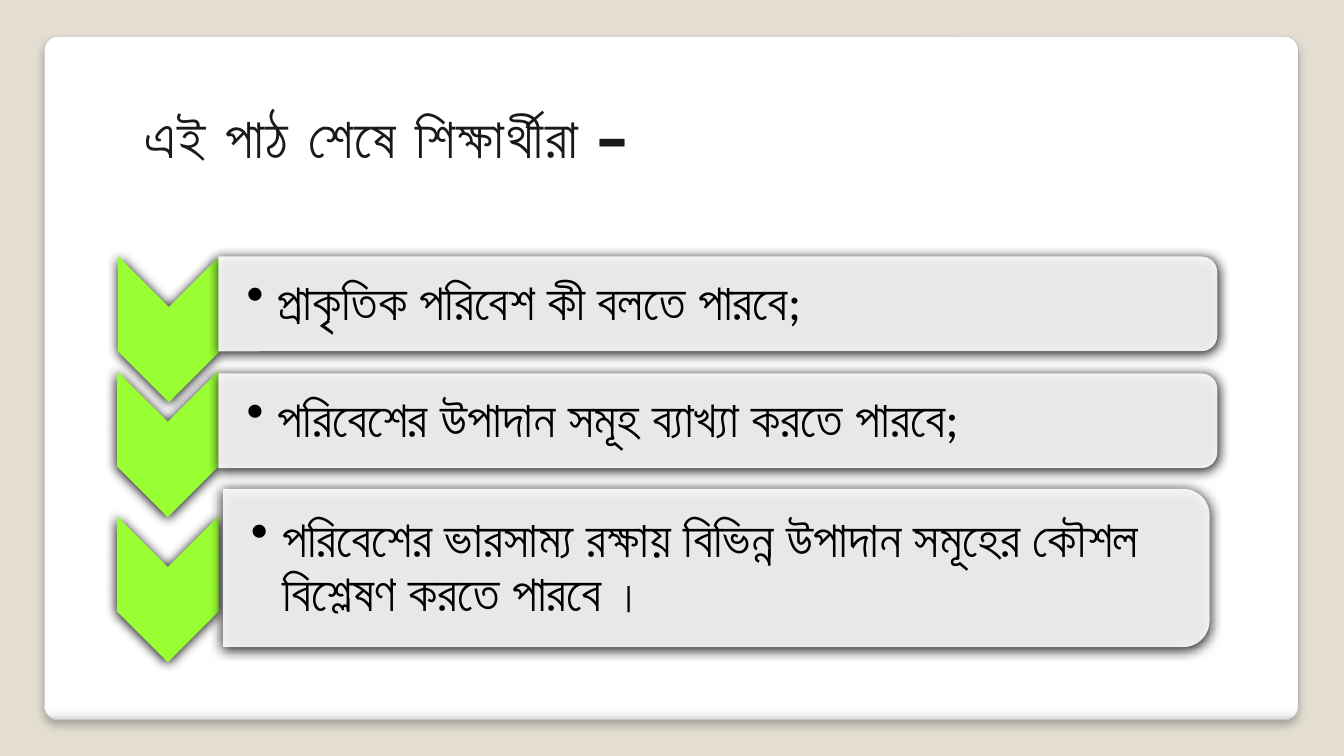
from lxml import etree
from pptx import Presentation
from pptx import util as u
from pptx.dml.color import RGBColor
from pptx.enum import shapes, text
from pptx.oxml import parse_xml
from pptx.oxml.ns import nsdecls, qn

BEIGE = RGBColor(0xE3, 0xDE, 0xD1)
WHITE = RGBColor(0xFF, 0xFF, 0xFF)
BLACK = RGBColor(0x00, 0x00, 0x00)
CHARCOAL = RGBColor(0x19, 0x19, 0x19)
GREY = RGBColor(0xA4, 0xA4, 0xA4)
LIME = RGBColor(0x99, 0xFF, 0x33)

PANEL_STOPS = [
    (0, WHITE),
    (98, WHITE),
    (99, RGBColor(0xF7, 0xF7, 0xF7)),
    (100, RGBColor(0xDA, 0xDA, 0xDA)),
]

# Chevron (left, top), bar (left, top, width, height), text runs (words, points)
GOALS = [
    ((3.51, 10.16), (6.5, 10.18, 29.73, 3.76),
     [("প্রাকৃতিক পরিবেশ কী বলতে পারবে;", 36)]),
    ((3.48, 14.72), (6.5, 14.82, 29.73, 3.76),
     [("পরিবেশের উপাদান সমূহ ব্যাখ্যা করতে পারবে;", 36)]),
    ((3.48, 20.48), (6.63, 19.4, 29.37, 6.28),
     [("পরিবেশের ভারসাম্য রক্ষায় বিভিন্ন উপাদান সমূহের কৌশল বিশ্লেষণ করতে পারবে ", 36),
      ("।", 32)]),
]


class GoalsSlide:
    """Draws on a grid of 40 columns and 30 rows."""

    columns, rows = 40, 30
    font_name = "Calibri"

    def __init__(self, presentation):
        self.column = presentation.slide_width / self.columns
        self.row = presentation.slide_height / self.rows
        self.slide = presentation.slides.add_slide(presentation.slide_layouts[6])
        fill = self.slide.background.fill
        fill.solid()
        fill.fore_color.rgb = BEIGE

    def box(self, left, top, width, height):
        """Turn grid units into slide lengths."""
        return [round(length) for length in (left * self.column, top * self.row,
                                             width * self.column, height * self.row)]

    def shadow(self, shape, opacity, blur, distance):
        """Drop a black shadow straight down; opacity in percent, lengths in points."""
        shape.shadow.inherit = False
        effects = shape._element.spPr.find(qn("a:effectLst"))
        effects.append(parse_xml(
            f'<a:outerShdw {nsdecls("a")} blurRad="{u.Pt(blur)}" dist="{u.Pt(distance)}" '
            f'dir="5400000" algn="ctr" rotWithShape="0"><a:srgbClr val="{BLACK}">'
            f'<a:alpha val="{opacity * 1000}"/></a:srgbClr></a:outerShdw>'))

    def panel(self, *grid_box):
        panel = self.slide.shapes.add_shape(
            shapes.MSO_SHAPE.ROUNDED_RECTANGLE, *self.box(*grid_box))
        panel.adjustments[0] = 0.02
        panel.line.color.rgb = GREY
        panel.line.width = u.Pt(0.16)
        panel.fill.gradient()
        gradient = panel._element.spPr.find(qn("a:gradFill"))
        stops = "".join(f'<a:gs pos="{share * 1000}"><a:srgbClr val="{color}"/></a:gs>'
                        for share, color in PANEL_STOPS)
        gradient.getparent().replace(gradient, parse_xml(
            f'<a:gradFill {nsdecls("a")} rotWithShape="1"><a:gsLst>{stops}</a:gsLst>'
            '<a:lin ang="5400000" scaled="0"/></a:gradFill>'))
        self.shadow(panel, 25, 6, 4)

    def turned_shape(self, kind, grid_box, color, opacity=100):
        """Add a shape that fills the box after a quarter turn."""
        left, top, width, height = self.box(*grid_box)
        shift = (width - height) // 2
        shape = self.slide.shapes.add_shape(kind, left + shift, top - shift, height, width)
        shape.rotation = 90
        shape.fill.solid()
        shape.fill.fore_color.rgb = color
        if opacity < 100:
            color_node = shape._element.spPr.find(".//" + qn("a:srgbClr"))
            etree.SubElement(color_node, qn("a:alpha"), val=str(opacity * 1000))
        shape.line.fill.background()
        self.shadow(shape, 100, 8.5, 1)

    def text_box(self, box, runs, color):
        frame = self.slide.shapes.add_textbox(*box).text_frame
        frame.word_wrap = True
        paragraph = frame.paragraphs[0]
        for words, size in runs:
            run = paragraph.add_run()
            run.text = words
            run.font.name = self.font_name
            run.font.size = u.Pt(size)
            run.font.color.rgb = color
        return frame

    def title(self, grid_box, runs):
        frame = self.text_box(self.box(*grid_box), runs, CHARCOAL)
        frame.auto_size = text.MSO_AUTO_SIZE.SHAPE_TO_FIT_TEXT
        for run in frame.paragraphs[0].runs:
            run.font.bold = True
            run.font._element.set("spc", "150")

    def bullet(self, grid_box, runs):
        """Set bulleted text clear of the rounded corners of its bar."""
        left, top, width, height = self.box(*grid_box)
        corner = round(height * 0.05)
        frame = self.text_box(
            (left, top + corner, width - corner, height - 2 * corner), runs, BLACK)
        frame.vertical_anchor = text.MSO_ANCHOR.MIDDLE
        frame.margin_left = u.Inches(0.28)
        frame.margin_top = frame.margin_right = frame.margin_bottom = u.Inches(0.03)
        paragraph = frame.paragraphs[0]
        paragraph.line_spacing = 0.9
        properties = paragraph._p.get_or_add_pPr()
        indent = u.Inches(0.31)
        properties.set("marL", str(indent))
        properties.set("indent", str(-indent))
        etree.SubElement(properties, qn("a:buChar"), char="•")

    def goal(self, chevron_corner, bar_box, runs):
        self.turned_shape(shapes.MSO_SHAPE.CHEVRON, (*chevron_corner, 3.03, 5.8), LIME)
        self.turned_shape(shapes.MSO_SHAPE.ROUND_2_SAME_RECTANGLE, bar_box, WHITE, 90)
        self.bullet(bar_box, runs)


def main():
    presentation = Presentation()
    presentation.slide_width = u.Inches(13.33)
    presentation.slide_height = u.Inches(7.5)
    slide = GoalsSlide(presentation)
    slide.panel(1.32, 1.44, 37.32, 27.12)
    slide.title((4, 3.44, 20.34, 3.64), [("এই পাঠ শেষে শিক্ষার্থীরা –", 40), (" ", 48)])
    for chevron_corner, bar_box, runs in GOALS:
        slide.goal(chevron_corner, bar_box, runs)
    presentation.save("out.pptx")


if __name__ == "__main__":
    main()
